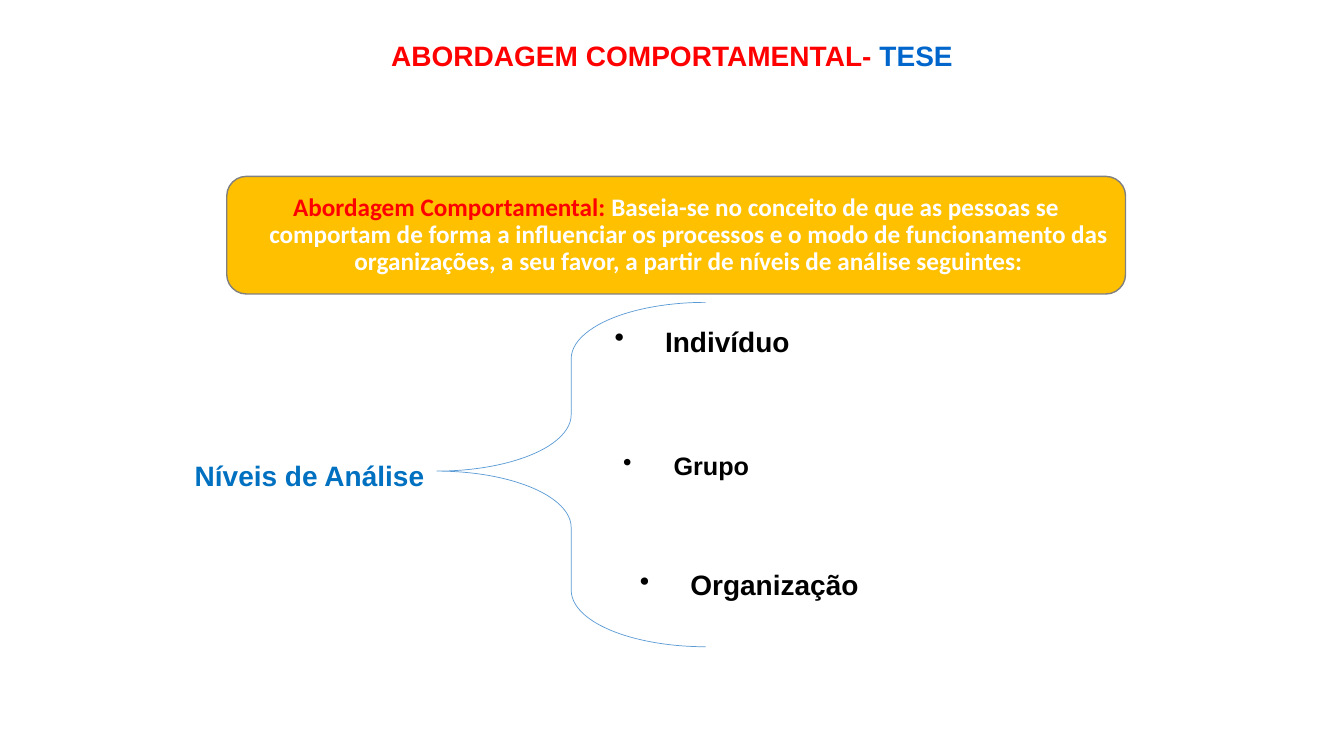
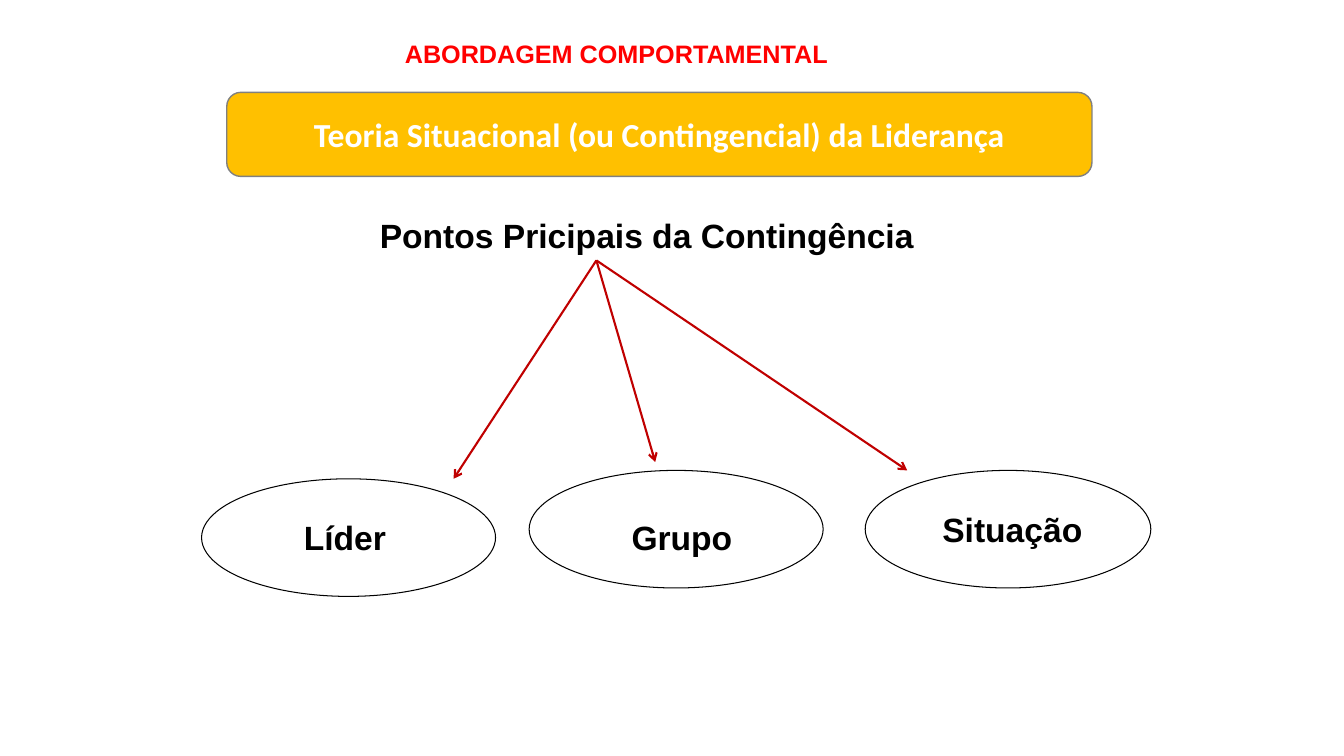
from dataclasses import dataclass
from typing import NamedTuple

from pptx import Presentation
from pptx.dml.color import RGBColor
from pptx.enum.shapes import MSO_CONNECTOR as Link, MSO_SHAPE as Form
from pptx.enum.text import MSO_ANCHOR as Anchor, MSO_AUTO_SIZE as Fit, PP_ALIGN as Align
from pptx.oxml.xmlchemy import OxmlElement as Node
from pptx.util import Emu, Pt

# Shared look
RED = RGBColor(0xFF, 0x00, 0x00)
BLUE = RGBColor(0x00, 0x66, 0xCC)
AZURE = RGBColor(0x00, 0x70, 0xC0)
SKY = RGBColor(0x5B, 0x9B, 0xD5)
GOLD = RGBColor(0xFF, 0xC0, 0x00)
GRAY = RGBColor(0x80, 0x80, 0x80)
WINE = RGBColor(0xC0, 0x00, 0x00)
BLACK = RGBColor(0x00, 0x00, 0x00)
WHITE = RGBColor(0xFF, 0xFF, 0xFF)
SANS, BAND = "Arial", "Calibri"
PX = 9525


class Box(NamedTuple):
    left: int
    top: int
    width: int
    height: int


class Point(NamedTuple):
    x: int
    y: int


class Part(NamedTuple):
    text: str
    color: RGBColor = BLACK


@dataclass
class Style:
    size: int = 20
    font: str = SANS
    align: Align = Align.LEFT
    anchor: Anchor = Anchor.TOP
    wrap: bool = True
    hang: int = 0
    bullet: str = ""
    line: float = 1.0
    before: int = 0


@dataclass
class Label:
    box: Box
    text: str
    size: int = 20
    fill: RGBColor | None = None


@dataclass
class Topic:
    oval: Box
    label: Label
    tip: Point


HEAD = Style(20, align=Align.CENTER, anchor=Anchor.MIDDLE, line=0.9)
LEAD = Style(18, BAND, Align.CENTER, Anchor.MIDDLE, hang=24, line=0.9, before=10)
THEME = Style(24, BAND, Align.CENTER, Anchor.MIDDLE)


def emu(*sizes: int) -> list[Emu]:
    return [Emu(size * PX) for size in sizes]


# Drawing helpers
def write(shape, parts: list[Part], style: Style) -> None:
    frame = shape.text_frame
    frame.text = parts[0].text
    frame.word_wrap = style.wrap
    frame.auto_size = Fit.NONE
    frame.vertical_anchor = style.anchor
    para = frame.paragraphs[0]
    for part in parts[1:]:
        para.add_run().text = part.text
    for run, part in zip(para.runs, parts):
        run.font.name = style.font
        run.font.size = Pt(style.size)
        run.font.bold = True
        run.font.color.rgb = part.color
    para.alignment = style.align
    para.line_spacing = style.line
    para.space_before = Pt(style.before)
    props = para._p.get_or_add_pPr()
    props.set("marL", str(style.hang * PX))
    props.set("indent", str(-style.hang * PX))
    mark = Node("a:buChar" if style.bullet else "a:buNone")
    if style.bullet:
        mark.set("char", style.bullet)
    props.append(mark)


def place(shape, box: Box) -> None:
    shape.left, shape.top, shape.width, shape.height = emu(*box)


def set_title(slide, box: Box, parts: list[Part], style: Style) -> None:
    title = slide.shapes.title
    place(title, box)
    write(title, parts, style)


def add_text(slide, box: Box, part: Part, style: Style, fill: RGBColor | None = None) -> None:
    shape = slide.shapes.add_textbox(*emu(*box))
    if fill is not None:
        shape.fill.solid()
        shape.fill.fore_color.rgb = fill
    write(shape, [part], style)


def add_form(slide, kind: Form, box: Box, color: RGBColor, width: float):
    shape = slide.shapes.add_shape(kind, *emu(*box))
    shape.shadow.inherit = False
    shape.fill.background()
    shape.line.color.rgb = color
    shape.line.width = Pt(width)
    return shape


def paint_band(shape) -> None:
    shape.fill.solid()
    shape.fill.fore_color.rgb = GOLD
    shape.line.color.rgb = GRAY
    shape.line.width = Pt(1)


def round_off(holder) -> None:
    geom = Node("a:prstGeom")
    geom.set("prst", "roundRect")
    geom.append(Node("a:avLst"))
    holder._element.spPr.append(geom)


def add_arrow(slide, start: Point, end: Point) -> None:
    arrow = slide.shapes.add_connector(Link.STRAIGHT, *emu(*start, *end))
    arrow.line.color.rgb = WINE
    arrow.line.width = Pt(1.5)
    tail = Node("a:tailEnd")
    tail.set("type", "arrow")
    arrow.line._get_or_add_ln().append(tail)
    arrow._element.spPr.append(Node("a:effectLst"))


# Slide 1: levels of analysis
def add_levels(deck) -> None:
    slide = deck.slides.add_slide(deck.slide_layouts[1])
    set_title(slide, Box(208, 29, 864, 51),
              [Part("ABORDAGEM COMPORTAMENTAL- ", RED), Part("TESE", BLUE)], HEAD)

    lead = slide.placeholders[1]
    place(lead, Box(216, 168, 856, 112))
    round_off(lead)
    paint_band(lead)
    write(lead, [
        Part("Abordagem Comportamental: ", RED),
        Part("Baseia-se no conceito de que as pessoas se comportam de forma a "
             "influenciar os processos e o modo de funcionamento das organizações, "
             "a seu favor, a partir de níveis de análise seguintes:", WHITE),
    ], LEAD)

    brace = add_form(slide, Form.LEFT_BRACE, Box(416, 288, 256, 328), SKY, 0.5)
    brace.adjustments[0] = 0.21
    brace.adjustments[1] = 0.49

    levels = [
        Label(Box(576, 304, 384, 64), "Indivíduo"),
        Label(Box(584, 424, 304, 38), "Grupo", 18),
        Label(Box(600, 536, 304, 64), "Organização"),
    ]
    for level in levels:
        add_text(slide, level.box, Part(level.text), Style(level.size, hang=48, bullet="•"))
    add_text(slide, Box(176, 432, 240, 48), Part("Níveis de Análise", AZURE),
             Style(align=Align.JUSTIFY, hang=48))


# Slide 2: main points of contingency
def add_points(deck) -> None:
    slide = deck.slides.add_slide(deck.slide_layouts[5])
    set_title(slide, Box(376, 32, 426, 38), [Part("ABORDAGEM COMPORTAMENTAL", RED)],
              Style(18, wrap=False))
    add_text(slide, Box(216, 200, 800, 49), Part("Pontos Pricipais da Contingência"),
             Style(24, align=Align.CENTER))

    band = add_form(slide, Form.ROUNDED_RECTANGLE, Box(216, 88, 824, 80), GRAY, 1)
    paint_band(band)
    write(band, [Part("Teoria Situacional (ou Contingencial) da Liderança", WHITE)], THEME)

    topics = [
        Topic(Box(192, 456, 280, 112), Label(Box(280, 488, 98, 49), "Líder", 24),
              Point(432, 456)),
        Topic(Box(504, 448, 280, 112), Label(Box(592, 488, 116, 49), "Grupo", 24, WHITE),
              Point(624, 440)),
        Topic(Box(824, 448, 272, 112), Label(Box(888, 480, 154, 49), "Situação", 24, WHITE),
              Point(864, 448)),
    ]
    for topic in topics:
        label = topic.label
        add_text(slide, label.box, Part(label.text), Style(label.size, wrap=False), label.fill)
        add_form(slide, Form.OVAL, topic.oval, BLACK, 0.75)
        add_arrow(slide, Point(568, 248), topic.tip)


def main() -> None:
    deck = Presentation()
    deck.slide_width, deck.slide_height = emu(1280, 720)
    add_levels(deck)
    add_points(deck)
    deck.save("out.pptx")


if __name__ == "__main__":
    main()
